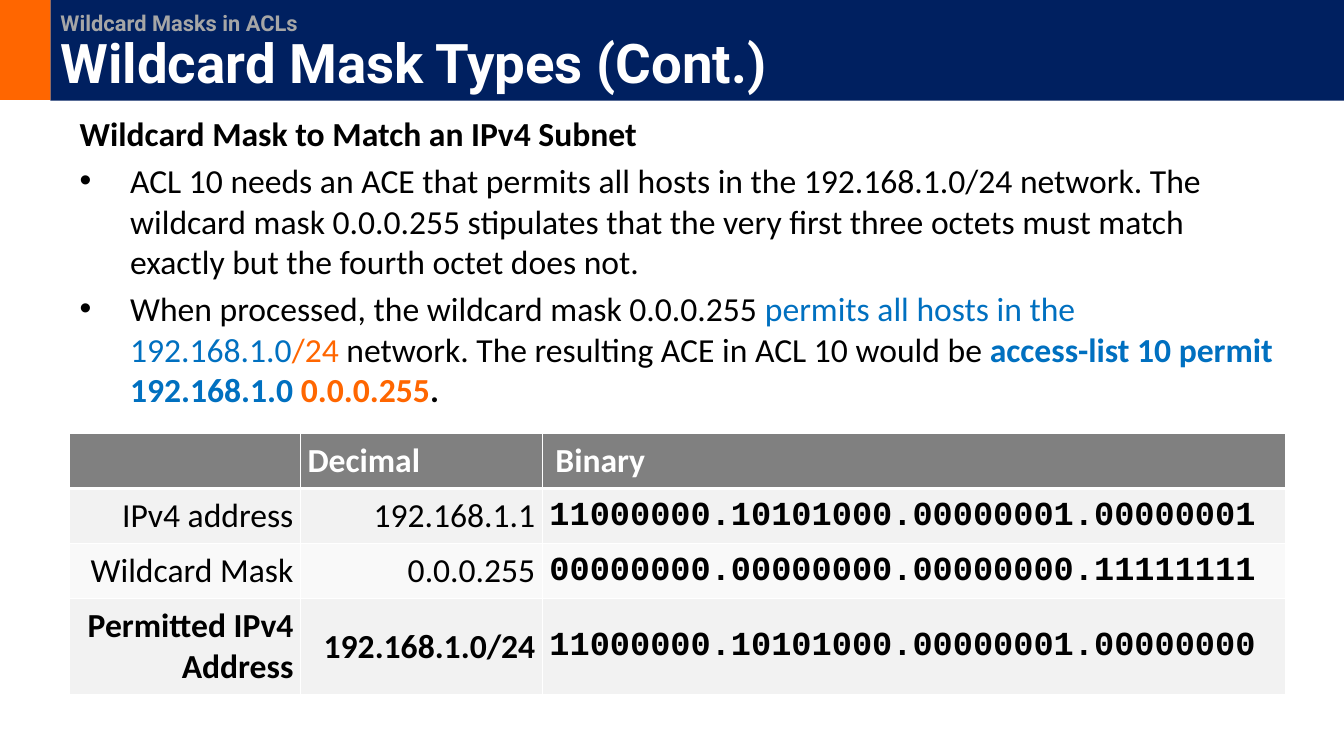
import dataclasses

import lxml.etree
import pptx
import pptx.dml.color
import pptx.enum.shapes
import pptx.enum.text
import pptx.oxml.ns
import pptx.util

RGBColor = pptx.dml.color.RGBColor
Align = pptx.enum.text.PP_ALIGN
Anchor = pptx.enum.text.MSO_ANCHOR
qn = pptx.oxml.ns.qn

ORANGE = RGBColor(0xFF, 0x66, 0x00)
NAVY = RGBColor(0x00, 0x20, 0x60)
BLUE = RGBColor(0x00, 0x70, 0xC0)
BLACK = RGBColor(0x00, 0x00, 0x00)
WHITE = RGBColor(0xFF, 0xFF, 0xFF)
SILVER = RGBColor(0xA6, 0xA6, 0xA6)
HEADER_GREY = RGBColor(0x80, 0x80, 0x80)
ODD_ROW = RGBColor(0xF2, 0xF2, 0xF2)
EVEN_ROW = RGBColor(0xF9, 0xF9, 0xF9)

SLIDE_WIDTH = pptx.util.Inches(13.33)
SLIDE_HEIGHT = pptx.util.Inches(7.5)
CELL_INSET = pptx.util.Inches(0.07)
BINARY_HEADER_INSET = pptx.util.Inches(0.13)
BULLET_INDENT = pptx.util.Inches(0.5)
COLUMN_SHARES = (17.18, 18, 55.29)
ROW_SHARES = (7.2, 7.2, 7.2, 11.33)


@dataclasses.dataclass(frozen=True)
class Phrase:
    text: str
    color: RGBColor = BLACK
    bold: bool = False
    size: float = 24
    font: str = "Calibri"


@dataclasses.dataclass(frozen=True)
class Point:
    phrases: tuple[Phrase, ...]
    bulleted: bool = True


@dataclasses.dataclass(frozen=True)
class MaskRow:
    label: str
    decimal: str
    binary: str
    fill: RGBColor
    bold: bool = False


HEADING = (
    Phrase("Wildcard Masks in ACLs", SILVER, True, 15.6, "Roboto"),
    Phrase("Wildcard Mask Types (Cont.)", WHITE, True, 39, "Roboto"),
)
POINTS = (
    Point((Phrase("Wildcard Mask to Match an IPv4 Subnet", bold=True),), bulleted=False),
    Point((
        Phrase(
            "ACL 10 needs an ACE that permits all hosts in the 192.168.1.0/24 network. "
            "The wildcard mask 0.0.0.255 stipulates that the very first three octets "
            "must match exactly but the fourth octet does not."
        ),
    )),
    Point((
        Phrase("When processed, the wildcard mask 0.0.0.255 "),
        Phrase("permits all hosts in the 192.168.1.0", BLUE),
        Phrase("/24 ", ORANGE),
        Phrase("network. The resulting ACE in ACL 10 would be "),
        Phrase("access-list 10 permit 192.168.1.0 ", BLUE, True),
        Phrase("0.0.0.255", ORANGE, True),
        Phrase(".", bold=True),
    )),
)
HEADERS = ("", "Decimal", "Binary")
MASK_ROWS = (
    MaskRow("IPv4 address", "192.168.1.1", "11000000.10101000.00000001.00000001", ODD_ROW),
    MaskRow("Wildcard Mask", "0.0.0.255", "00000000.00000000.00000000.11111111", EVEN_ROW),
    MaskRow("Permitted IPv4 Address", "192.168.1.0/24",
            "11000000.10101000.00000001.00000000", ODD_ROW, True),
)


def across(percent: float) -> int:
    return round(SLIDE_WIDTH * percent / 100)


def down(percent: float) -> int:
    return round(SLIDE_HEIGHT * percent / 100)


def place(part, left: float, top: float, width: float, height: float) -> None:
    part.left, part.top = across(left), down(top)
    part.width, part.height = across(width), down(height)


def format_run(run, phrase: Phrase) -> None:
    run.font.name = phrase.font
    run.font.size = pptx.util.Pt(phrase.size)
    run.font.bold = phrase.bold
    run.font.color.rgb = phrase.color


def add_phrase(paragraph, phrase: Phrase) -> None:
    run = paragraph.add_run()
    run.text = phrase.text
    format_run(run, phrase)


def draw_heading(slide) -> None:
    accent = slide.shapes.add_shape(
        pptx.enum.shapes.MSO_SHAPE.RECTANGLE, 0, 0, across(3.75), down(13.2))
    accent.shadow.inherit = False
    accent.fill.solid()
    accent.fill.fore_color.rgb = ORANGE
    accent.line.fill.background()

    title = slide.shapes.title
    place(title, 3.75, 0, 96.25, 13.33)
    title.fill.solid()
    title.fill.fore_color.rgb = NAVY
    frame = title.text_frame
    frame.auto_size = pptx.enum.text.MSO_AUTO_SIZE.NONE
    frame.vertical_anchor = Anchor.BOTTOM
    paragraph = frame.paragraphs[0]
    paragraph.alignment = Align.LEFT
    paragraph.line_spacing = 0.9
    topic, headline = HEADING
    add_phrase(paragraph, topic)
    paragraph.add_line_break()
    line_break = paragraph._p.find(qn("a:br"))
    lxml.etree.SubElement(line_break, qn("a:rPr"), sz=str(round(topic.size * 100)))
    add_phrase(paragraph, headline)


def draw_points(slide) -> None:
    body = slide.placeholders[1]
    place(body, 5.18, 14.27, 90.55, 36.53)
    frame = body.text_frame
    frame.auto_size = pptx.enum.text.MSO_AUTO_SIZE.NONE
    frame.vertical_anchor = Anchor.TOP
    for index, point in enumerate(POINTS):
        paragraph = frame.add_paragraph() if index else frame.paragraphs[0]
        paragraph.space_before = pptx.util.Pt(5)
        properties = paragraph._p.get_or_add_pPr()
        indent = BULLET_INDENT if point.bulleted else 0
        properties.set("marL", str(indent))
        properties.set("indent", str(-indent))
        if point.bulleted:
            lxml.etree.SubElement(properties, qn("a:buFont"), typeface="Arial")
            lxml.etree.SubElement(properties, qn("a:buChar"), char="•")
        else:
            lxml.etree.SubElement(properties, qn("a:buNone"))
        for phrase in point.phrases:
            add_phrase(paragraph, phrase)


def border_cell(cell, bottom: float) -> None:
    properties = cell._tc.get_or_add_tcPr()
    for index, (side, width) in enumerate((("L", 1), ("R", 1), ("T", 1), ("B", bottom))):
        line = lxml.etree.Element(qn(f"a:ln{side}"), w=str(pptx.util.Pt(width)))
        fill = lxml.etree.SubElement(line, qn("a:solidFill"))
        lxml.etree.SubElement(fill, qn("a:srgbClr"), val=str(WHITE))
        properties.insert(index, line)


def fill_cell(cell, phrase: Phrase, fill: RGBColor, alignment: Align,
              inset: int = CELL_INSET, bottom: float = 1) -> None:
    cell.fill.solid()
    cell.fill.fore_color.rgb = fill
    cell.margin_left = cell.margin_right = inset
    cell.margin_top = cell.margin_bottom = CELL_INSET
    cell.vertical_anchor = Anchor.MIDDLE
    paragraph = cell.text_frame.paragraphs[0]
    paragraph.text = phrase.text
    paragraph.alignment = alignment
    for run in paragraph.runs:
        format_run(run, phrase)
    border_cell(cell, bottom)


def draw_masks(slide) -> None:
    masks = slide.shapes.add_table(
        len(ROW_SHARES), len(COLUMN_SHARES), across(5.18), down(57.33),
        across(sum(COLUMN_SHARES)), down(sum(ROW_SHARES))).table
    for column, share in zip(masks.columns, COLUMN_SHARES):
        column.width = across(share)
    for row, share in zip(masks.rows, ROW_SHARES):
        row.height = down(share)
    for column, header in enumerate(HEADERS):
        inset = BINARY_HEADER_INSET if header == "Binary" else CELL_INSET
        fill_cell(masks.cell(0, column), Phrase(header, WHITE, True), HEADER_GREY,
                  Align.LEFT, inset, bottom=3)
    for row, mask in enumerate(MASK_ROWS, start=1):
        for column, text in enumerate((mask.label, mask.decimal)):
            fill_cell(masks.cell(row, column), Phrase(text, bold=mask.bold),
                      mask.fill, Align.RIGHT)
        fill_cell(masks.cell(row, 2), Phrase(mask.binary, bold=True, font="Courier New"),
                  mask.fill, Align.LEFT)


def main() -> None:
    deck = pptx.Presentation()
    deck.slide_width, deck.slide_height = SLIDE_WIDTH, SLIDE_HEIGHT
    slide = deck.slides.add_slide(deck.slide_layouts[1])
    draw_heading(slide)
    draw_points(slide)
    draw_masks(slide)
    deck.save("out.pptx")


if __name__ == "__main__":
    main()
